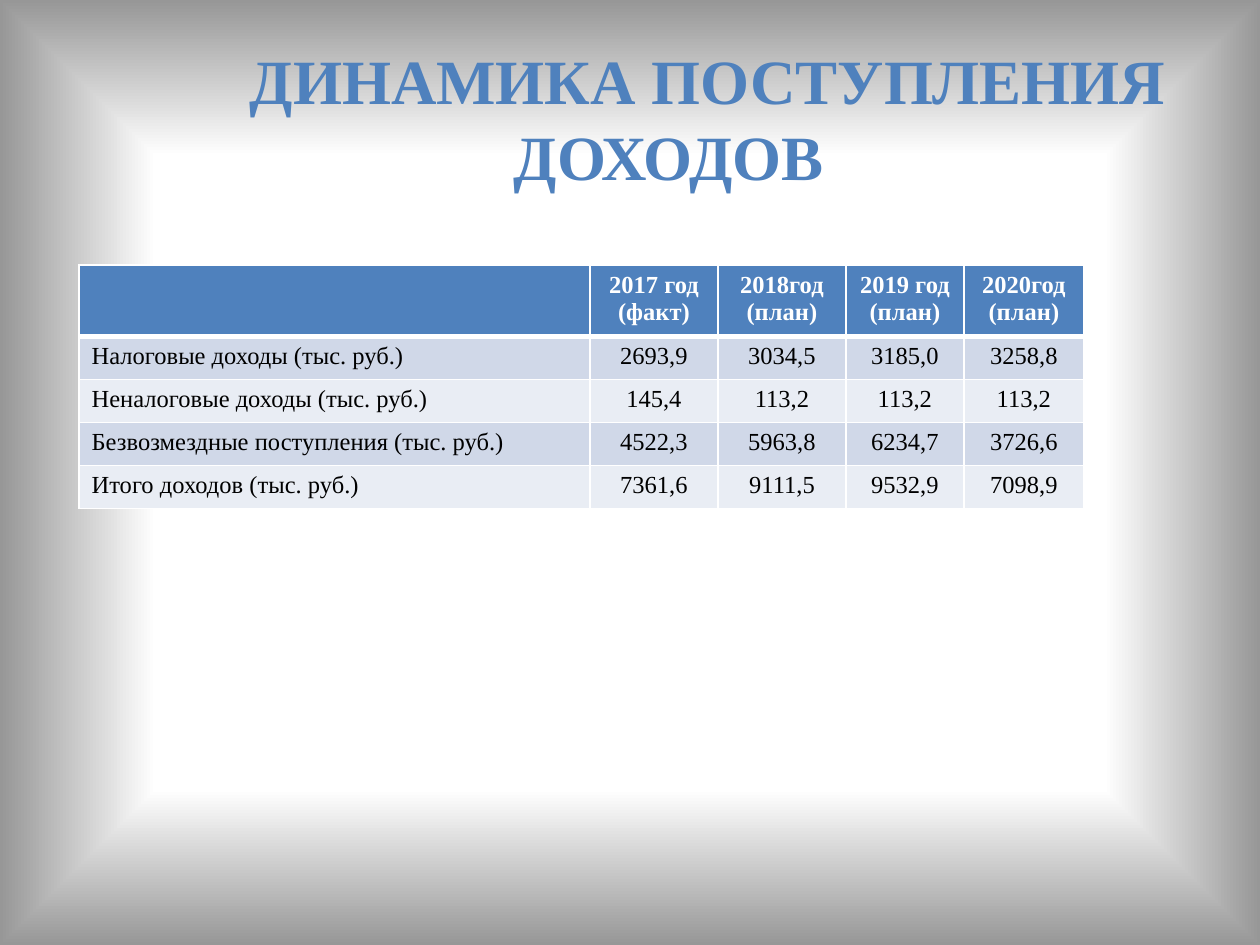
from lxml import etree
from pptx import Presentation
from pptx import util as u
from pptx.dml.color import RGBColor
from pptx.enum import text
from pptx.oxml import parse_xml
from pptx.oxml.ns import nsdecls

PX = u.Inches(1) // 126
FONT = "Times New Roman"
BLUE = "4F81BD"
WHITE = "FFFFFF"
CENTER = text.PP_ALIGN.CENTER


def add_run(paragraph, words, size, color, bold):
    run = paragraph.add_run()
    run.text = words
    run.font.name = FONT
    run.font.size = u.Pt(size)
    run.font.bold = bold
    run.font.color.rgb = RGBColor.from_string(color)


presentation = Presentation()
presentation.slide_width = 1260 * PX
presentation.slide_height = 945 * PX
slide = presentation.slides.add_slide(presentation.slide_layouts[6])

stops = "".join(
    f'<a:gs pos="{position * 1000}"><a:srgbClr val="{color}"/></a:gs>'
    for position, color in [(0, WHITE), (67, WHITE), (100, "979797")]
)
background = parse_xml(
    f'<p:bg {nsdecls("p", "a")}><p:bgPr><a:gradFill rotWithShape="1">'
    f'<a:gsLst>{stops}</a:gsLst><a:path path="shape">'
    '<a:fillToRect l="50000" t="50000" r="50000" b="50000"/></a:path>'
    '</a:gradFill><a:effectLst/></p:bgPr></p:bg>'
)
slide.element.cSld.insert(0, background)

title = slide.shapes.add_textbox(63 * PX, 38 * PX, 1134 * PX, 158 * PX)
frame = title.text_frame
frame.word_wrap = True
frame.vertical_anchor = text.MSO_ANCHOR.MIDDLE
title_lines = [("ДИНАМИКА ПОСТУПЛЕНИЯ", 156), ("ДОХОДОВ", 78)]
for index, (words, indent) in enumerate(title_lines):
    paragraph = frame.add_paragraph() if index else frame.paragraphs[0]
    paragraph.alignment = CENTER
    paragraph._p.get_or_add_pPr().set("marL", str(indent * PX))
    add_run(paragraph, words, 36, BLUE, True)

rows = [
    ["", "2017 год (факт)", "2018год\n(план)", "2019 год\n(план)", "2020год\n(план)"],
    ["Налоговые доходы (тыс. руб.)", "2693,9", "3034,5", "3185,0", "3258,8"],
    ["Неналоговые доходы (тыс. руб.)", "145,4", "113,2", "113,2", "113,2"],
    ["Безвозмездные поступления (тыс. руб.)", "4522,3", "5963,8", "6234,7", "3726,6"],
    ["Итого доходов (тыс. руб.)", "7361,6", "9111,5", "9532,9", "7098,9"],
]
widths = [511, 128, 128, 118, 120]
heights = [70, 43, 43, 43, 43]
table = slide.shapes.add_table(
    len(rows), len(widths), 79 * PX, 265 * PX, sum(widths) * PX, sum(heights) * PX
).table
for column, width in zip(table.columns, widths):
    column.width = width * PX
for row, height in zip(table.rows, heights):
    row.height = height * PX

for row_index, values in enumerate(rows):
    header = row_index == 0
    fill = BLUE if header else ("E9EDF4", "D0D8E8")[row_index % 2]
    for column_index, value in enumerate(values):
        cell = table.cell(row_index, column_index)
        for line_index, words in enumerate(value.split("\n")):
            frame = cell.text_frame
            paragraph = frame.add_paragraph() if line_index else frame.paragraphs[0]
            if column_index:
                paragraph.alignment = CENTER
            if words:
                add_run(paragraph, words, 14, WHITE if header else "000000", header)
        properties = cell._tc.get_or_add_tcPr()
        for side in "LRTB":
            thick = (row_index, side) in [(0, "B"), (1, "T")]
            border = parse_xml(
                f'<a:ln{side} {nsdecls("a")} w="{u.Pt(3 if thick else 1)}"><a:solidFill>'
                f'<a:srgbClr val="{WHITE}"/></a:solidFill></a:ln{side}>'
            )
            properties.append(border)
        cell.fill.solid()
        cell.fill.fore_color.rgb = RGBColor.from_string(fill)

presentation.save("out.pptx")
